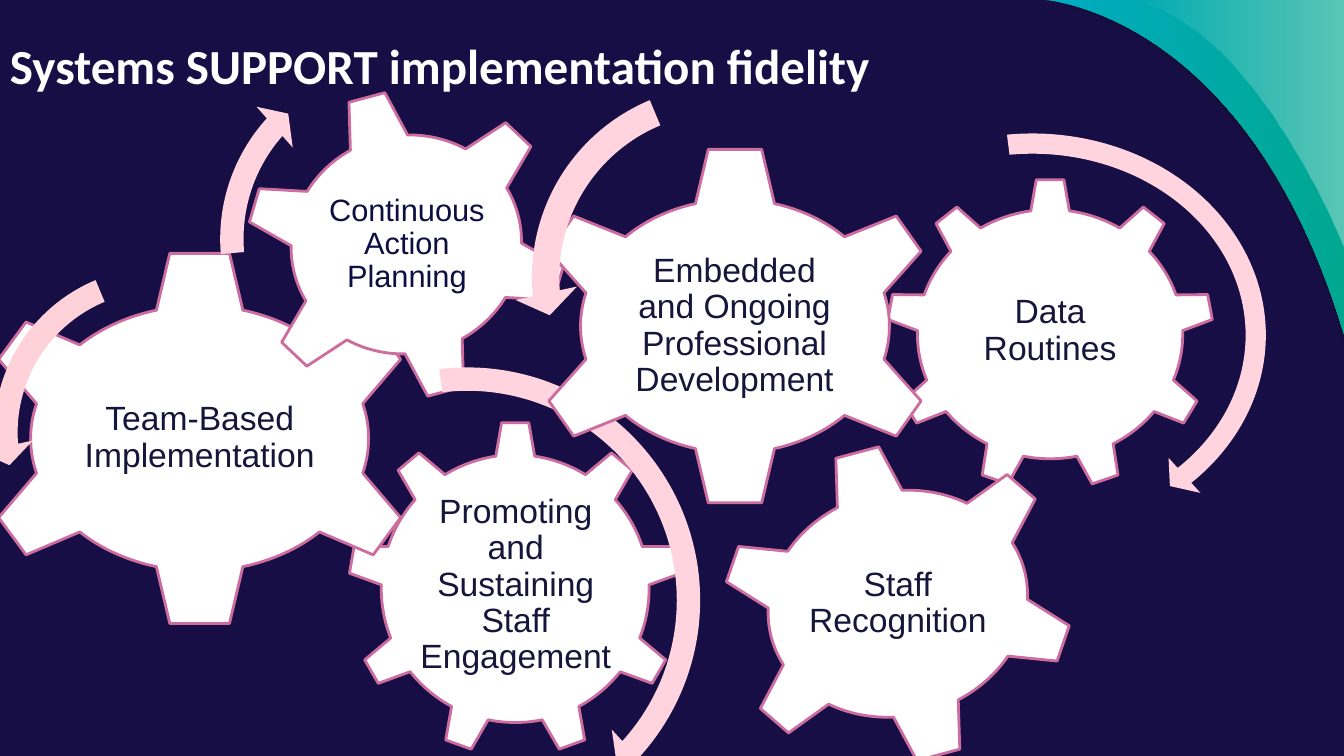
from dataclasses import dataclass

from lxml import etree
from pptx import Presentation
from pptx import util as u
from pptx.dml.color import RGBColor
from pptx.enum import shapes, text
from pptx.oxml.ns import qn

PX = 9144  # EMU per px, 100 px to the inch
COLOURS = {
    "background": "160E44", "shade": "12102F", "cyan": "00ACC2", "green": "00A791",
    "white": "FFFFFF", "gear line": "CD6D9F", "arrow": "FFD4DF", "rose arrow": "FFD2D9",
    "label": "15163A", "blue label": "0D0F41",
}
KINDS = shapes.MSO_SHAPE
Box = tuple[int, int, int, int]
Point = tuple[int, int]


@dataclass
class Gear:
    kind: KINDS
    box: Box
    label: str
    label_box: Box
    rotation: int = 0
    size: int = 24
    colour: str = "label"


@dataclass
class Arrow:
    kind: KINDS
    box: Box
    adjustments: tuple[float, ...]
    colour: str = "arrow"


@dataclass
class Swoosh:
    """Corner area under a Bezier curve, filled from left to right."""
    curve: tuple[Point, Point, Point, Point]
    colours: tuple[str, str]
    opacities: tuple[int, int]


SWOOSHES = [
    Swoosh(((1029, 0), (1029, 0), (1235, 11), (1333, 339)), ("shade", "shade"), (54, 54)),
    Swoosh(((1036, 0), (1036, 0), (1237, 11), (1333, 331)), ("cyan", "green"), (100, 100)),
    Swoosh(((1116, 0), (1241, 15), (1333, 245), (1333, 245)), ("white", "white"), (0, 36)),
]
LEFT_TURN = (0.065, 4.3, 104.891, 148.378, 0.075)
MACHINE = [
    Gear(KINDS.GEAR_9, (345, 418, 332, 332), "Promoting and Sustaining Staff Engagement",
         (412, 495, 199, 171)),
    Gear(KINDS.GEAR_6, (-26, 247, 448, 376), "Team-Based Implementation", (79, 342, 238, 185)),
    Gear(KINDS.GEAR_6, (242, 88, 322, 309), "Continuous Action Planning", (314, 155, 179, 175),
         rotation=345, size=22, colour="blue label"),
    Arrow(KINDS.CIRCULAR_ARROW, (217, 349, 493, 493), (0.047, 2.99, 25.52, 157.862, 0.055)),
    Arrow(KINDS.LEFT_CIRCULAR_ARROW, (-21, 250, 358, 358), LEFT_TURN, "rose arrow"),
    Arrow(KINDS.CIRCULAR_ARROW, (203, 44, 386, 386), (0.06, 3.941, 133.138, 105.082, 0.07)),
    Gear(KINDS.GEAR_9, (879, 177, 325, 309), "Data Routines", (943, 249, 197, 159)),
    Gear(KINDS.GEAR_6, (522, 144, 414, 359), "Embedded and Ongoing Professional Development",
         (620, 235, 217, 177)),
    Gear(KINDS.GEAR_6, (713, 440, 355, 318), "Staff Recognition", (793, 507, 195, 183),
         rotation=345),
    Arrow(KINDS.CIRCULAR_ARROW, (779, 119, 490, 427), (0.047, 2.99, 25.619, 157.66, 0.055)),
    Arrow(KINDS.LEFT_CIRCULAR_ARROW, (510, 67, 416, 416), LEFT_TURN),
]


def rgb(name: str) -> RGBColor:
    return RGBColor.from_string(COLOURS[name])


def emu(box: Box) -> list[int]:
    return [length * PX for length in box]


def curve_points(curve: tuple[Point, ...], steps: int = 40) -> list[Point]:
    """Sample a cubic Bezier curve in EMU."""
    points = []
    for step in range(steps + 1):
        t = step / steps
        weights = ((1 - t) ** 3, 3 * t * (1 - t) ** 2, 3 * t ** 2 * (1 - t), t ** 3)
        points.append(tuple(round(PX * sum(w * p[axis] for w, p in zip(weights, curve)))
                            for axis in (0, 1)))
    return points


def draw_swoosh(slide, swoosh: Swoosh) -> None:
    start, *rest = curve_points(swoosh.curve)
    builder = slide.shapes.build_freeform(*start)
    builder.add_line_segments([*rest, (1333 * PX, 0)], close=True)
    shape = builder.convert_to_shape()
    shape.shadow.inherit = False
    shape.line.fill.background()
    shape.fill.gradient()
    shape.fill.gradient_angle = 0
    for stop, colour in zip(shape.fill.gradient_stops, swoosh.colours):
        stop.color.rgb = rgb(colour)
    for element, opacity in zip(shape._element.iter(qn("a:srgbClr")), swoosh.opacities):
        etree.SubElement(element, qn("a:alpha")).set("val", str(opacity * 1000))


def draw_shape(slide, kind: KINDS, box: Box, colour: str):
    shape = slide.shapes.add_shape(kind, *emu(box))
    shape.shadow.inherit = False
    shape.fill.solid()
    shape.fill.fore_color.rgb = rgb(colour)
    shape.line.fill.background()
    return shape


def draw_text(slide, box: Box, words: str, font: str, size: int, colour: str, inset: int):
    frame = slide.shapes.add_textbox(*emu(box)).text_frame
    frame.word_wrap = True
    frame.margin_left = frame.margin_right = inset * PX
    frame.margin_top = frame.margin_bottom = inset * PX
    frame.text = words
    run_font = frame.paragraphs[0].runs[0].font
    run_font.name, run_font.size = font, u.Pt(size)
    run_font.color.rgb = rgb(colour)
    return frame


def draw_gear(slide, gear: Gear) -> None:
    shape = draw_shape(slide, gear.kind, gear.box, "white")
    shape.rotation = gear.rotation
    shape.line.color.rgb = rgb("gear line")
    shape.line.width = u.Pt(2)
    frame = draw_text(slide, gear.label_box, gear.label, "Arial", gear.size, gear.colour, 3)
    frame.vertical_anchor = text.MSO_ANCHOR.MIDDLE
    frame.paragraphs[0].alignment = text.PP_ALIGN.CENTER
    frame.paragraphs[0].line_spacing = 0.9


def draw_arrow(slide, arrow: Arrow) -> None:
    shape = draw_shape(slide, arrow.kind, arrow.box, arrow.colour)
    for index, value in enumerate(arrow.adjustments):
        shape.adjustments[index] = value


def main() -> None:
    presentation = Presentation()
    presentation.slide_width, presentation.slide_height = 1333 * PX, 750 * PX
    slide = presentation.slides.add_slide(presentation.slide_layouts[6])
    slide.background.fill.solid()
    slide.background.fill.fore_color.rgb = rgb("background")
    for swoosh in SWOOSHES:
        draw_swoosh(slide, swoosh)
    for part in MACHINE:
        if isinstance(part, Gear):
            draw_gear(slide, part)
        else:
            draw_arrow(slide, part)
    title = draw_text(slide, (0, 25, 1192, 92), "Systems SUPPORT implementation fidelity",
                      "Calibri", 35, "white", 10)
    title.paragraphs[0].runs[0].font.bold = True
    presentation.save("out.pptx")


if __name__ == "__main__":
    main()
